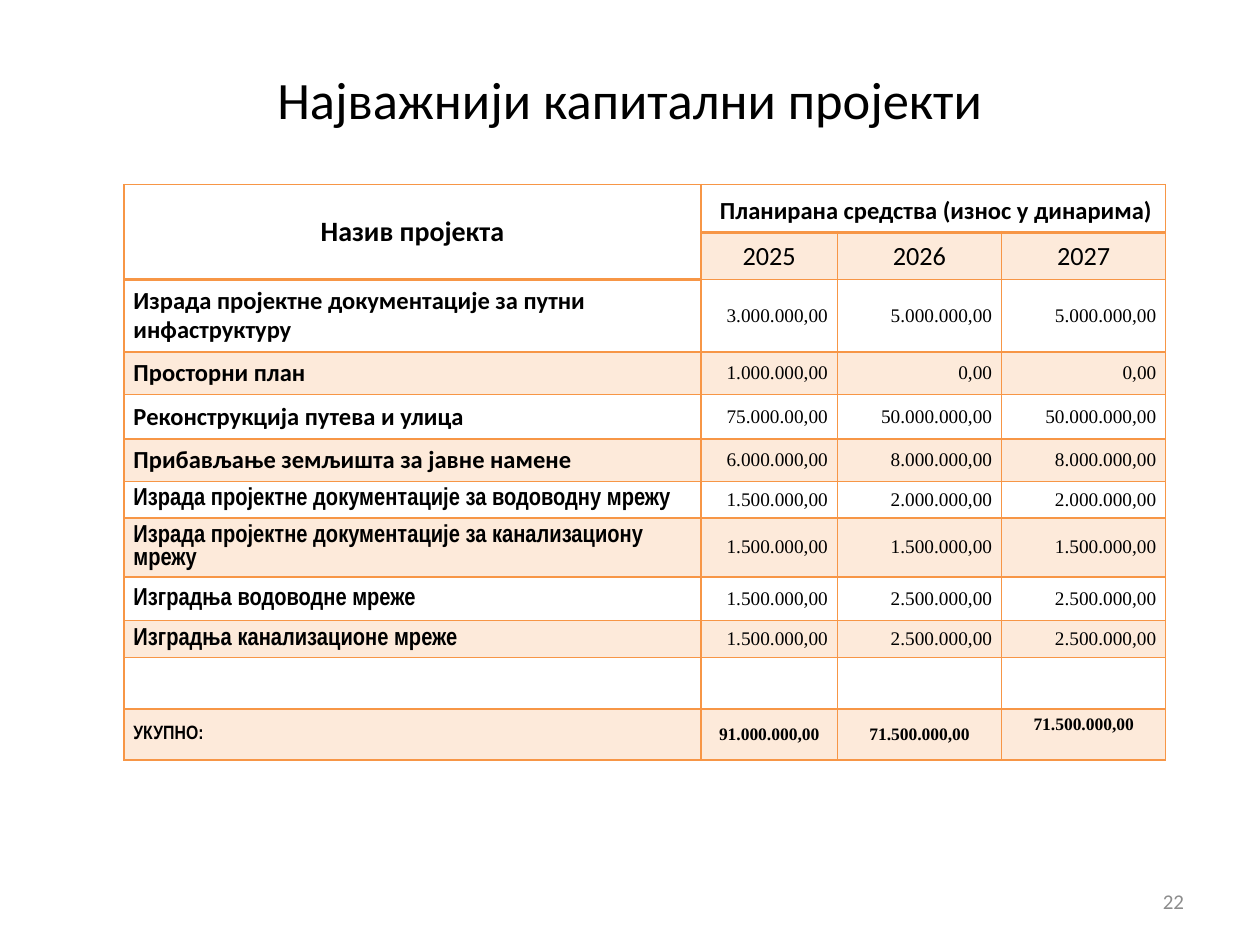
from lxml import etree
from pptx import Presentation
from pptx.dml.color import RGBColor
from pptx.enum.text import MSO_ANCHOR, PP_ALIGN
from pptx.oxml.ns import qn
from pptx.util import Cm, Pt

LEFT, MID, RIGHT = PP_ALIGN.LEFT, PP_ALIGN.CENTER, PP_ALIGN.RIGHT
TOP, CENTRE, LOW = MSO_ANCHOR.TOP, MSO_ANCHOR.MIDDLE, MSO_ANCHOR.BOTTOM
SANS, SLIM, SERIF = "Calibri", "Arial Narrow", "Times New Roman"
ORANGE, BLACK, GREY = "F79646", "000000", "8C8C8C"

WIDTHS = [11.63, 2.75, 3.31, 3.31]
HEIGHTS = [0.96, 0.95, 1.46, 0.85, 0.89, 0.86, 0.73, 1.19, 0.88, 0.74, 1.04, 1.03]
YEARS = ["2025", "2026", "2027"]
PROJECTS = [
    ("Израда пројектне документације за путни инфаструктуру", SANS,
     ["3.000.000,00", "5.000.000,00", "5.000.000,00"]),
    ("Просторни план", SANS, ["1.000.000,00", "0,00", "0,00"]),
    ("Реконструкција путева и улица", SANS,
     ["75.000.00,00", "50.000.000,00", "50.000.000,00"]),
    ("Прибављање земљишта за јавне намене", SANS,
     ["6.000.000,00", "8.000.000,00", "8.000.000,00"]),
    ("Израда пројектне документације за водоводну мрежу", SLIM,
     ["1.500.000,00", "2.000.000,00", "2.000.000,00"]),
    ("Израда пројектне документације за канализациону мрежу", SLIM,
     ["1.500.000,00", "1.500.000,00", "1.500.000,00"]),
    ("Изградња водоводне мреже", SLIM,
     ["1.500.000,00", "2.500.000,00", "2.500.000,00"]),
    ("Изградња канализационе мреже", SLIM,
     ["1.500.000,00", "2.500.000,00", "2.500.000,00"]),
]
TOTALS = ["91.000.000,00", "71.500.000,00", "71.500.000,00"]


def tint(code):
    return RGBColor.from_string(code)


class Deck:
    def __init__(self, slide):
        self.slide = slide

    def style(self, frame, text, size, font=SANS, bold=False, align=LEFT, color=BLACK):
        frame.text = text
        para = frame.paragraphs[0]
        para.alignment = align
        for run in para.runs:
            run.font.size = Pt(size)
            run.font.name = font
            run.font.bold = bold
            run.font.color.rgb = tint(color)

    def label(self, x, y, w, h, text, size, **look):
        frame = self.slide.shapes.add_textbox(Cm(x), Cm(y), Cm(w), Cm(h)).text_frame
        frame.word_wrap = True
        frame.vertical_anchor = CENTRE
        self.style(frame, text, size, **look)

    def grid(self, x, y, widths, heights):
        frame = self.slide.shapes.add_table(
            len(heights), len(widths), Cm(x), Cm(y), Cm(sum(widths)), Cm(sum(heights)))
        table = frame.table
        table.first_row = table.horz_banding = False
        for col, w in zip(table.columns, widths):
            col.width = Cm(w)
        for row, h in zip(table.rows, heights):
            row.height = Cm(h)
        return table

    def border(self, cell, base=1):
        props = cell._tc.get_or_add_tcPr()
        for side, width in zip(("L", "R", "T", "B"), (1, 1, 1, base)):
            line = etree.SubElement(props, qn(f"a:ln{side}"), w=str(Pt(width)))
            fill = etree.SubElement(line, qn("a:solidFill"))
            etree.SubElement(fill, qn("a:srgbClr"), val=ORANGE)

    def shade(self, cell, tinted):
        if not tinted:
            cell.fill.background()
            return
        cell.fill.solid()
        cell.fill.fore_color.rgb = tint(ORANGE)
        color = cell._tc.tcPr.find(qn("a:solidFill"))[0]
        etree.SubElement(color, qn("a:alpha"), val="20000")

    def cell(self, cell, text, size, anchor=CENTRE, **look):
        cell.vertical_anchor = anchor
        self.style(cell.text_frame, text, size, **look)


def main():
    prs = Presentation()
    prs.slide_width, prs.slide_height = Cm(25.4), Cm(19.05)
    deck = Deck(prs.slides.add_slide(prs.slide_layouts[6]))

    # Table frame: borders, margins and banding
    table = deck.grid(2.5, 3.72, WIDTHS, HEIGHTS)
    for r in range(len(HEIGHTS)):
        for c in range(len(WIDTHS)):
            cell = table.cell(r, c)
            cell.margin_left = cell.margin_right = Cm(0.19)
            cell.margin_top = cell.margin_bottom = Cm(0.13)
            head = r == 0 or (r == 1 and c == 0)
            deck.border(cell, 2 if head else 1)
            deck.shade(cell, r % 2 == 1 and not head)
    table.cell(0, 0).merge(table.cell(1, 0))
    table.cell(0, 1).merge(table.cell(0, 3))

    # Headings
    deck.cell(table.cell(0, 0), "Назив пројекта", 16, bold=True, align=MID)
    deck.cell(table.cell(0, 1), " Планирана средства (износ у динарима)", 14,
              anchor=LOW, bold=True, align=MID)
    for c, year in enumerate(YEARS, 1):
        deck.cell(table.cell(1, c), year, 15, anchor=LOW, align=MID)

    # Projects
    for r, (name, font, sums) in enumerate(PROJECTS, 2):
        deck.cell(table.cell(r, 0), name, 14, font=font, bold=True)
        for c, value in enumerate(sums, 1):
            deck.cell(table.cell(r, c), value, 11, font=SERIF, align=RIGHT)

    # Totals
    last = len(HEIGHTS) - 1
    deck.cell(table.cell(last, 0), "УКУПНО:", 11, font=SLIM, bold=True)
    for c, value in enumerate(TOTALS, 1):
        deck.cell(table.cell(last, c), value, 10, anchor=TOP if c == 3 else CENTRE,
                  font=SERIF, bold=True, align=MID)

    # Page number and title
    deck.label(18.2, 17.66, 5.92, 1.01, "22", 12, align=RIGHT, color=GREY)
    deck.label(1.27, 0.76, 22.86, 2.44, "Најважнији капитални пројекти", 30, align=MID)

    prs.save("out.pptx")


if __name__ == "__main__":
    main()
